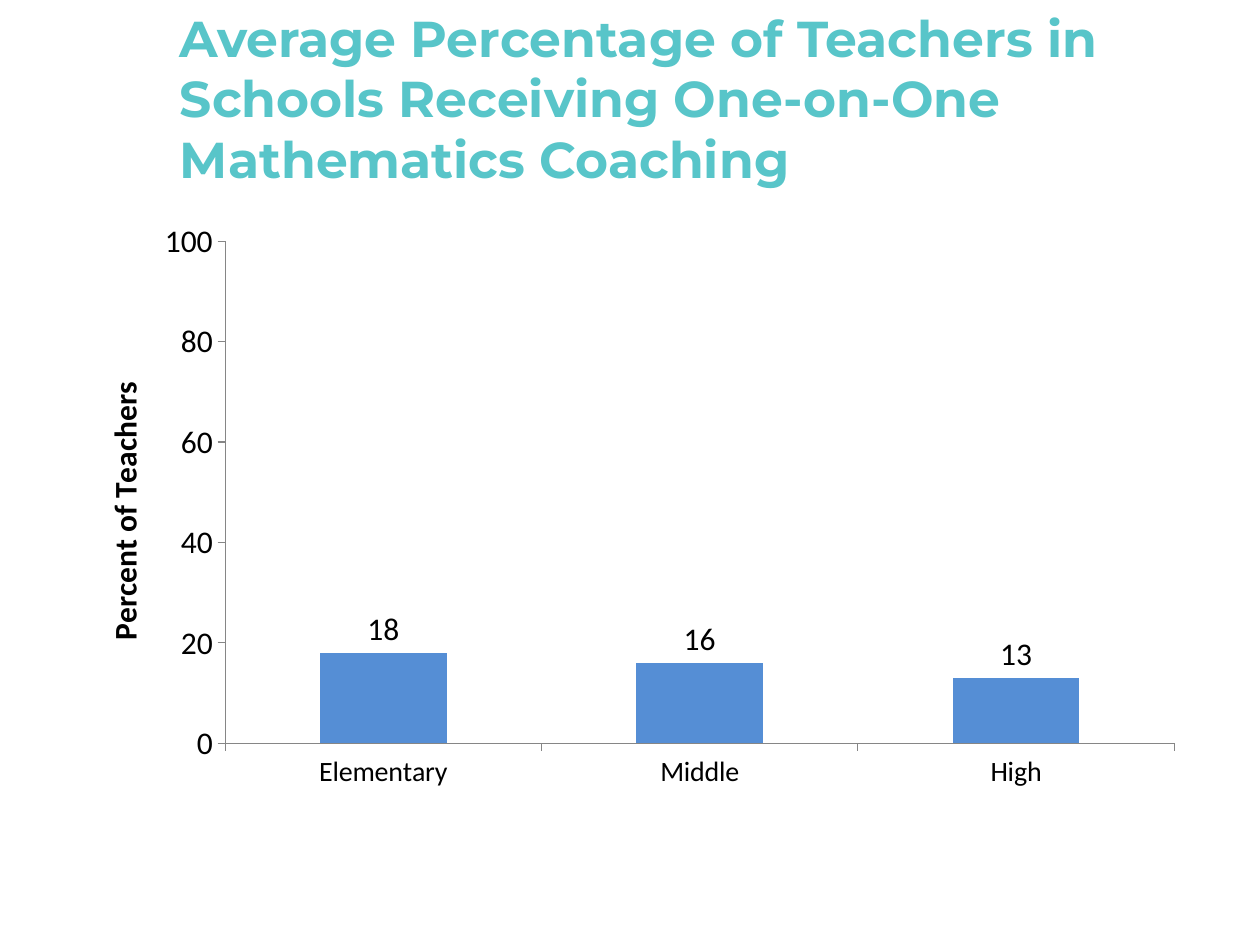
from lxml import etree
from pptx import Presentation
from pptx import util as u
from pptx.chart.data import CategoryChartData
from pptx.dml.color import RGBColor
from pptx.enum import chart as ch, text
from pptx.oxml.ns import qn

Inches, Pt = u.Inches, u.Pt
COLORS = {"title": "58C5C9", "bar": "558ED5", "text": "000000", "axis": "868686"}


def rgb(name):
    return RGBColor.from_string(COLORS[name])


def style_font(font, name, size, color, bold=False):
    font.name, font.size, font.bold = name, Pt(size), bold
    font.color.rgb = rgb(color)


def set_layout(layout, **values):
    """Fix a chart part's place as fractions of the chart area."""
    for child in list(layout):
        layout.remove(child)
    manual = etree.SubElement(layout, qn("c:manualLayout"))
    for tag, value in values.items():
        etree.SubElement(manual, qn(f"c:{tag}")).set("val", str(value))


def get_layout(parent, index):
    layout = parent.find(qn("c:layout"))
    if layout is None:
        layout = etree.Element(qn("c:layout"))
        parent.insert(index, layout)
    return layout


def add_title(slide, left, top, width, height):
    tf = slide.shapes.add_textbox(left, top, width, height).text_frame
    tf.word_wrap = True
    tf.vertical_anchor = text.MSO_ANCHOR.MIDDLE
    tf.text = ("Average Percentage of Teachers in Schools Receiving "
               "One-on-One Mathematics Coaching")
    style_font(tf.paragraphs[0].runs[0].font, "Montserrat", 28.8, "title", True)


def style_axis(axis, size):
    axis.has_major_gridlines = False
    axis.major_tick_mark = ch.XL_TICK_MARK.OUTSIDE
    axis.minor_tick_mark = ch.XL_TICK_MARK.NONE
    axis.format.line.color.rgb = rgb("axis")
    axis.format.line.width = Pt(0.75)
    style_font(axis.tick_labels.font, "Calibri", size, "text")


def add_teacher_chart(slide, left, top, width, height):
    data = CategoryChartData()
    data.categories = ["Elementary", "Middle", "High"]
    data.add_series("Series 1", (18, 16, 13))
    chart = slide.shapes.add_chart(ch.XL_CHART_TYPE.COLUMN_CLUSTERED,
                                   left, top, width, height, data).chart
    chart.has_legend = chart.has_title = False
    style_font(chart.font, "Calibri", 18, "text")

    style_axis(chart.category_axis, 16)
    axis = chart.value_axis
    style_axis(axis, 18)
    axis.minimum_scale, axis.maximum_scale, axis.major_unit = 0, 100, 20
    title = axis.axis_title
    title.text_frame.text = "Percent of Teachers"
    style_font(title.text_frame.paragraphs[0].runs[0].font,
               "Calibri", 18, "text", True)

    plot = chart.plots[0]
    plot.gap_width = 150
    plot.vary_by_categories = False
    fill = plot.series[0].format.fill
    fill.solid()
    fill.fore_color.rgb = rgb("bar")
    plot.has_data_labels = True
    labels = plot.data_labels
    labels.show_value = True
    labels.position = ch.XL_LABEL_POSITION.OUTSIDE_END
    style_font(labels.font, "Calibri", 18, "text")

    plot_area = chart.element.find(".//" + qn("c:plotArea"))
    set_layout(get_layout(plot_area, 0), layoutTarget="inner", xMode="edge",
               yMode="edge", x=0.143, y=0.052, w=0.837, h=0.848)
    title_element = plot_area.find(".//" + qn("c:title"))
    set_layout(get_layout(title_element, 1), xMode="edge", yMode="edge",
               x=0.03, y=0.28)


def main():
    prs = Presentation()
    prs.slide_width, prs.slide_height = Inches(10), Inches(7.5)
    s = prs.slides.add_slide(prs.slide_layouts[6])
    add_teacher_chart(s, Inches(0.5), Inches(1.67), Inches(9), Inches(4.7))
    add_title(s, Inches(1.33), Inches(0.3), Inches(8.17), Inches(0.95))
    prs.save("out.pptx")


if __name__ == "__main__":
    main()
